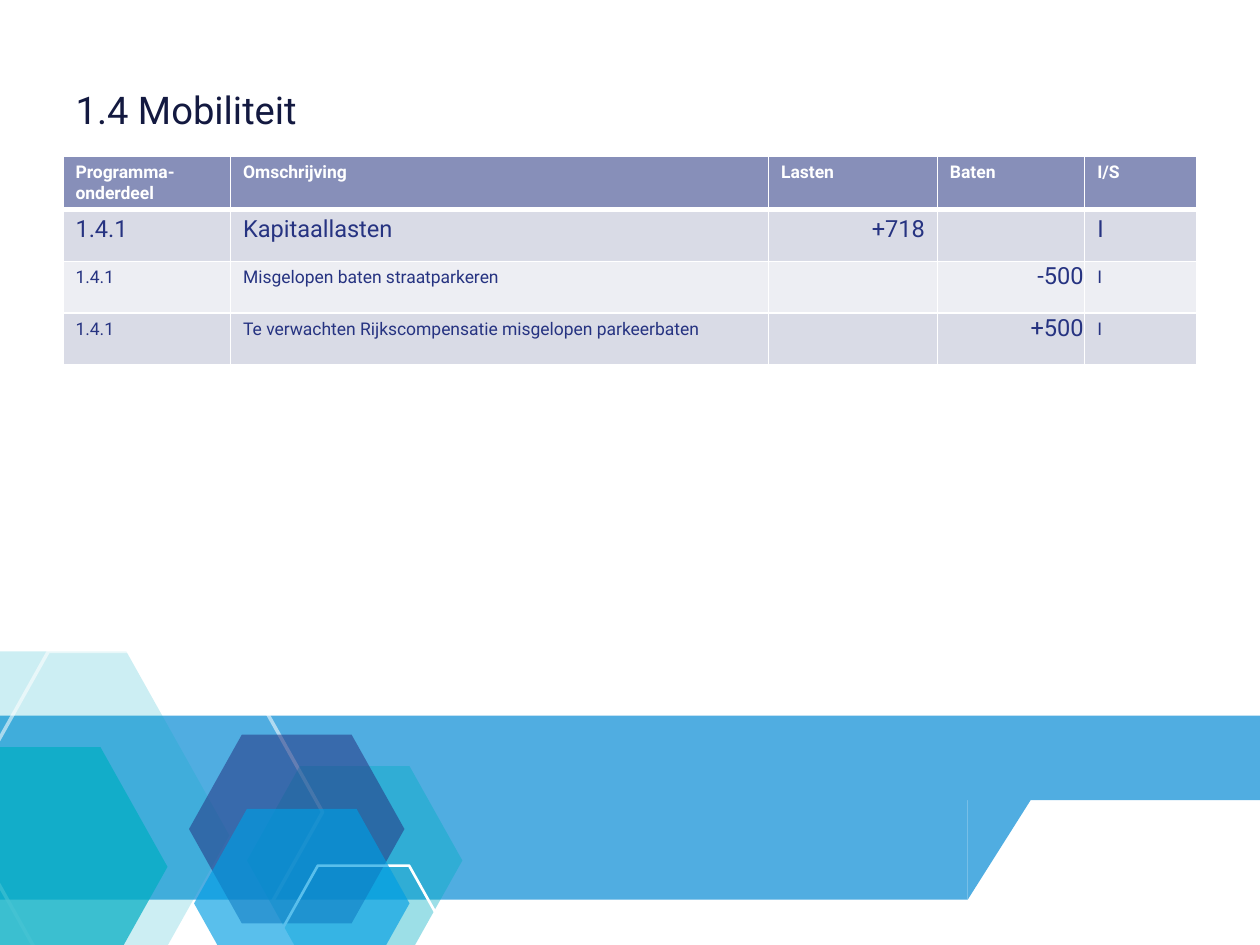
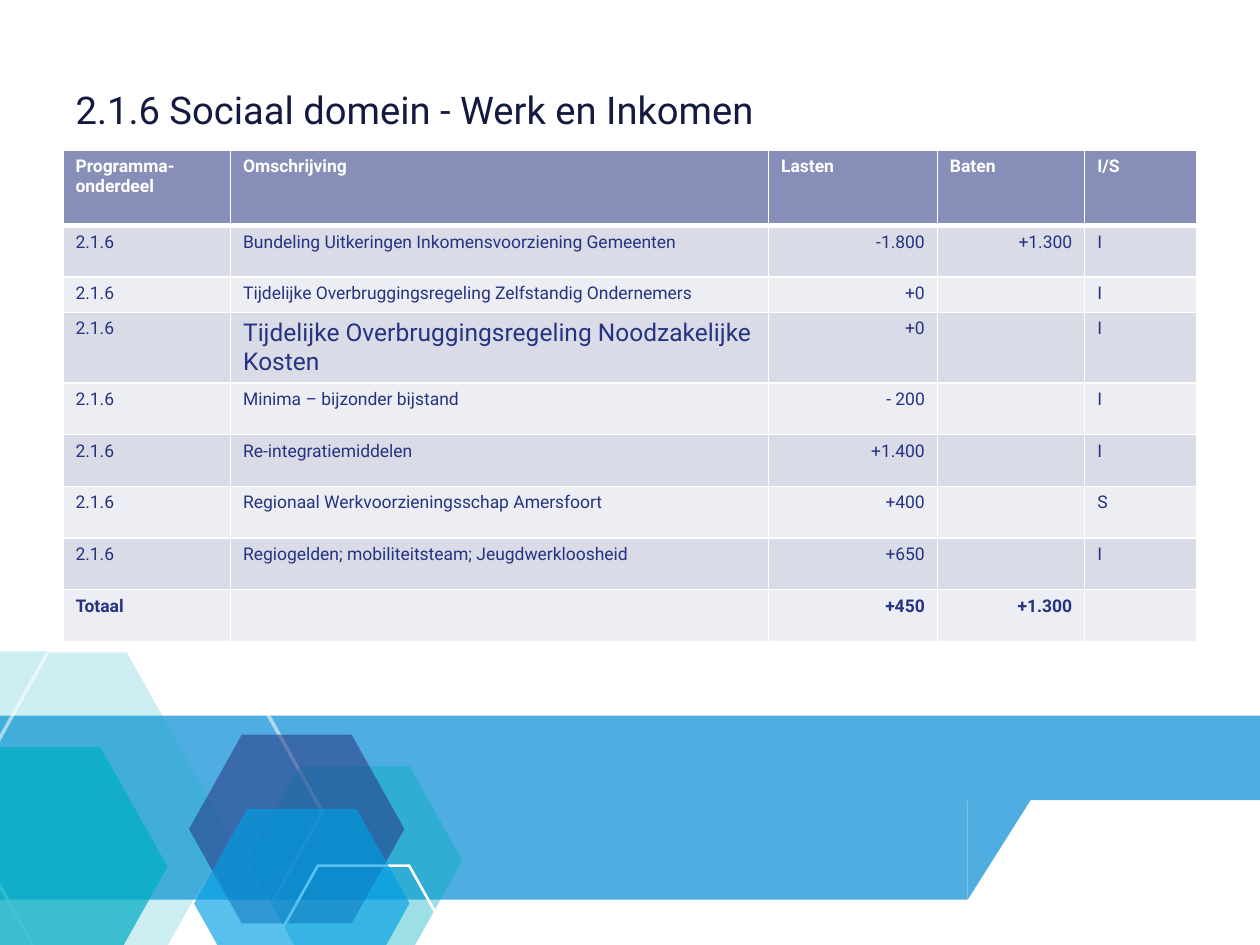
import pptx
import pptx.util
import pptx.dml.color
import pptx.enum.shapes
import pptx.enum.text
import pptx.oxml
import pptx.oxml.ns
from lxml import etree

Inches = pptx.util.Inches
Pt = pptx.util.Pt
Kind = pptx.enum.shapes.MSO_SHAPE
Align = pptx.enum.text.PP_ALIGN
qn = pptx.oxml.ns.qn

theme = {
    "font": "Roboto",
    "white": "FFFFFF", "band": "50ADE1", "teal": "00ADC3",
    "navy": "263381", "blue": "009EE3", "title": "131940",
    "head": "878FB9", "odd": "D9DBE6", "even": "EDEEF3",
    "title_pt": 21.8, "cell_pt": 10, "big_pt": 13.5, "wide_pt": 14,
}


def tint(fill, name, alpha=100):
    fill.solid()
    fill.fore_color.rgb = pptx.dml.color.RGBColor.from_string(theme[name])
    if alpha < 100:
        color = fill._xPr.find(".//" + qn("a:srgbClr"))
        etree.SubElement(color, qn("a:alpha"), val=str(alpha * 1000))


def write(para, text, size, name, bold=False):
    run = para.add_run()
    run.text = text
    run.font.name = theme["font"]
    run.font.size = Pt(size)
    run.font.bold = bold
    tint(run.font.fill, name)


deck = pptx.Presentation()
deck.slide_width, deck.slide_height = Inches(10), Inches(7.5)
layout = deck.slide_layouts[5]

decor = [
    (Kind.RECTANGLE, (0, 6.27, 10, 1.23), "white", 100, 0),
    (Kind.RECTANGLE, (0, 5.68, 10, 0.67), "band", 100, 0),
    (Kind.SNIP_1_RECTANGLE, (0, 6.27, 7.68, 0.87), "band", 100, 0),
    (Kind.HEXAGON, (-1.5, 5.17, 3.32, 2.92), "teal", 20, 0),
    (Kind.HEXAGON, (-0.33, 5.17, 2.89, 2.55), "white", 55, 2),
    (Kind.HEXAGON, (1.96, 6.08, 1.71, 1.5), "teal", 39, 0),
    (Kind.HEXAGON, (1.5, 5.83, 1.71, 1.5), "navy", 55, 0),
    (Kind.HEXAGON, (2.17, 6.87, 1.43, 1.26), "white", 100, 1.5),
    (Kind.HEXAGON, (1.54, 6.42, 1.71, 1.5), "blue", 65, 0),
    (Kind.HEXAGON, (-0.83, 5.93, 2.16, 1.9), "teal", 71, 0),
    (Kind.RIGHT_TRIANGLE, (7.68, 6.27, 0.55, 0.87), "band", 100, 0),
]
adjust = {Kind.SNIP_1_RECTANGLE: 0, Kind.HEXAGON: 0.28}

heads = ["Programma-onderdeel", "Omschrijving", "Lasten", "Baten", "I/S"]
widths = [1.33, 4.27, 1.34, 1.17, 0.89]
pages = [
    {
        "title": "1.4 Mobiliteit",
        "top": 1.24,
        "heights": [0.41] * 4,
        "rows": [
            ["1.4.1", "Kapitaallasten", "+718", "", "I"],
            ["1.4.1", "Misgelopen baten straatparkeren", "", "-500", "I"],
            ["1.4.1", "Te verwachten Rijkscompensatie misgelopen parkeerbaten",
             "", "+500", "I"],
        ],
        "sizes": {spot: theme["big_pt"] for spot in
                  [(1, 0), (1, 1), (1, 2), (1, 4), (2, 3), (3, 3)]},
        "tight": [(2, 3), (3, 3)],
    },
    {
        "title": "2.1.6 Sociaal domein - Werk en Inkomen",
        "top": 1.19,
        "heights": [0.6, 0.41, 0.28, 0.56] + [0.41] * 5,
        "rows": [
            ["2.1.6", "Bundeling Uitkeringen Inkomensvoorziening Gemeenten",
             "-1.800", "+1.300", "I"],
            ["2.1.6", "Tijdelijke Overbruggingsregeling Zelfstandig Ondernemers",
             "+0", "", "I"],
            ["2.1.6", "Tijdelijke Overbruggingsregeling Noodzakelijke Kosten",
             "+0", "", "I"],
            ["2.1.6", "Minima – bijzonder bijstand", "- 200", "", "I"],
            ["2.1.6", "Re-integratiemiddelen", "+1.400", "", "I"],
            ["2.1.6", "Regionaal Werkvoorzieningsschap Amersfoort", "+400", "", "S"],
            ["2.1.6", "Regiogelden; mobiliteitsteam; Jeugdwerkloosheid",
             "+650", "", "I"],
            ["Totaal", "", "+450", "+1.300", ""],
        ],
        "sizes": {(3, 1): theme["wide_pt"]},
        "tight": [],
    },
]

slides = [deck.slides.add_slide(layout) for page in pages]

for index, (kind, box, name, alpha, line) in enumerate(decor):
    shape = slides[0].shapes.add_shape(kind, *map(Inches, box))
    shape.shadow.inherit = False
    if kind in adjust:
        shape.adjustments[0] = adjust[kind]
    if kind == Kind.RIGHT_TRIANGLE:
        shape.rotation = 180
        shape.element.spPr.find(qn("a:xfrm")).set("flipH", "1")
    if line:
        shape.fill.background()
        shape.line.width = Pt(line)
        tint(shape.line.fill, name, alpha)
    else:
        tint(shape.fill, name, alpha)
        shape.line.fill.background()
    shape.element.find(".//" + qn("p:cNvPr")).set("id", str(100 + index))
    layout.shapes.element.insert(2 + index, shape.element)

for slide, page in zip(slides, pages):
    title = slide.shapes.title
    title.left, title.top = Inches(0.5), Inches(0.52)
    title.width, title.height = Inches(9), Inches(0.65)
    title.text_frame.vertical_anchor = pptx.enum.text.MSO_ANCHOR.MIDDLE
    para = title.text_frame.paragraphs[0]
    para.alignment = Align.LEFT
    para.line_spacing = 1.1
    write(para, page["title"], theme["title_pt"], "title")

    rows = [heads] + page["rows"]
    heights = page["heights"]
    table = slide.shapes.add_table(
        len(rows), len(heads), Inches(0.5), Inches(page["top"]),
        Inches(9), Inches(sum(heights))).table
    for column, width in zip(table.columns, widths):
        column.width = Inches(width)
    for r, row in enumerate(rows):
        table.rows[r].height = Inches(heights[r])
        for c, text in enumerate(row):
            cell = table.cell(r, c)
            tint(cell.fill, "head" if r == 0 else "odd" if r % 2 else "even")
            props = cell._tc.get_or_add_tcPr()
            for spot, side in enumerate("LRTB"):
                thick = (r, side) in [(0, "B"), (1, "T")]
                edge = etree.Element(qn("a:ln" + side), w=str(Pt(3 if thick else 1)))
                solid = etree.SubElement(edge, qn("a:solidFill"))
                etree.SubElement(solid, qn("a:srgbClr"), val=theme["white"])
                props.insert(spot, edge)
            if (r, c) in page["tight"]:
                cell.margin_left = cell.margin_right = cell.margin_top = Inches(0.01)
                cell.margin_bottom = 0
            para = cell.text_frame.paragraphs[0]
            para.alignment = Align.RIGHT if r and c in (2, 3) else Align.LEFT
            if text:
                write(para, text, page["sizes"].get((r, c), theme["cell_pt"]),
                      "navy" if r else "white", r == 0 or row[0] == "Totaal")
            else:
                etree.SubElement(para._p, qn("a:endParaRPr"),
                                 sz=str(theme["cell_pt"] * 100))

deck.save("out.pptx")
